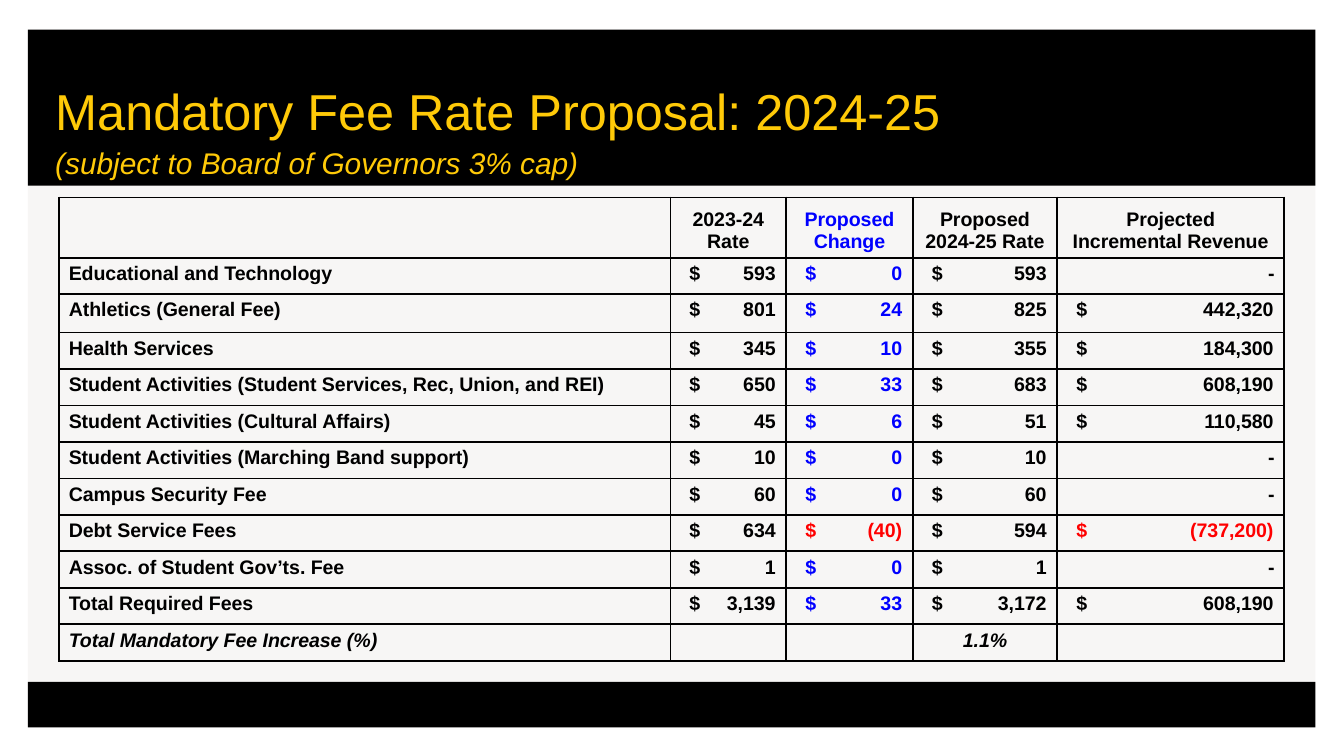
"""Build the mandatory fee rate proposal slide."""
from lxml.etree import SubElement
from pptx import Presentation
from pptx.dml.color import RGBColor
from pptx.enum.shapes import MSO_SHAPE as Shape
from pptx.enum.text import MSO_ANCHOR as Anchor, MSO_AUTO_SIZE as AutoSize, PP_ALIGN as Align
from pptx.oxml.ns import qn
from pptx.util import Cm, Pt

BLACK, BLUE, RED, GOLD = "000000", "0000FF", "FF0000", "FFCA08"


def color(value):
    """Return the colour of a hex string."""
    return RGBColor.from_string(value)


def write(para, text, size=10.5, fill=BLACK, bold=False, italic=False, align=Align.LEFT):
    """Add a formatted span to a paragraph."""
    para.alignment = align
    span = para.add_run()
    span.text = text
    span.font.name = "Arial"
    span.font.size = Pt(size)
    span.font.bold = bold
    span.font.italic = italic
    span.font.color.rgb = color(fill)


deck = Presentation()
deck.slide_width, deck.slide_height = Cm(25.4), Cm(14.28)
page = deck.slides.add_slide(deck.slide_layouts[5])

for top, height, fill, alpha in [
    (0.56, 13.18, "D0C6C0", 15),
    (12.88, 0.86, BLACK, 100),
    (0.56, 2.95, BLACK, 100),
]:
    band = page.shapes.add_shape(Shape.RECTANGLE, Cm(0.53), Cm(top), Cm(24.33), Cm(height))
    band.shadow.inherit = False
    band.line.fill.background()
    band.fill.solid()
    band.fill.fore_color.rgb = color(fill)
    if alpha < 100:
        shade = band.fill._xPr.find(".//" + qn("a:srgbClr"))
        SubElement(shade, qn("a:alpha"), val=str(alpha * 1000))

title = page.shapes.title
page.shapes._spTree.append(title._element)
title.left, title.top, title.width, title.height = Cm(0.79), Cm(0), Cm(22.86), Cm(3.53)
frame = title.text_frame
frame.auto_size = AutoSize.NONE
frame.word_wrap = True
frame.vertical_anchor = Anchor.BOTTOM
para = frame.paragraphs[0]
para.line_spacing, para.space_before, para.space_after = 1.1, Pt(6.2), Pt(6)
write(para, "Mandatory Fee Rate Proposal: 2024-25", size=27, fill=GOLD)
para.add_line_break()
write(para, "(subject to Board of Governors 3% cap)", size=16, fill=GOLD, italic=True)

rows = [
    ("", "2023-24 Rate", "Proposed Change", "Proposed 2024-25 Rate", "Projected\nIncremental Revenue"),
    ("Educational and Technology", "593", "0", "593", "-"),
    ("Athletics (General Fee)", "801", "24", "825", "442,320"),
    ("Health Services", "345", "10", "355", "184,300"),
    ("Student Activities (Student Services, Rec, Union, and REI)", "650", "33", "683", "608,190"),
    ("Student Activities (Cultural Affairs)", "45", "6", "51", "110,580"),
    ("Student Activities (Marching Band support)", "10", "0", "10", "-"),
    ("Campus Security Fee", "60", "0", "60", "-"),
    ("Debt Service Fees", "634", "(40)", "594", "(737,200)"),
    ("Assoc. of Student Gov’ts. Fee", "1", "0", "1", "-"),
    ("Total Required Fees", "3,139", "33", "3,172", "608,190"),
    ("Total Mandatory Fee Increase (%)", "", "", "1.1%", ""),
]
widths = [11.55, 2.19, 2.39, 2.73, 4.29]
heights = [1.14, 0.68, 0.73] + [0.69] * 9
last = len(rows) - 1

grid = page.shapes.add_table(
    len(rows), len(widths), Cm(1.12), Cm(3.73), Cm(sum(widths)), Cm(sum(heights))
).table
grid.first_row = grid.horz_banding = False
for column, width in zip(grid.columns, widths):
    column.width = Cm(width)

for r, (row, height) in enumerate(zip(rows, heights)):
    grid.rows[r].height = Cm(height)
    for c, (text, width) in enumerate(zip(row, widths)):
        cell = grid.cell(r, c)
        money = 0 < r < last and c > 0 and text != "-"
        cell.margin_left = Cm(0.36 if money else 0.18)
        cell.margin_right = Cm(0.18)
        cell.margin_top = cell.margin_bottom = Cm(0.1)
        cell.vertical_anchor = Anchor.BOTTOM if r == 0 else Anchor.TOP
        properties = cell._tc.get_or_add_tcPr()
        for side in ("lnL", "lnR", "lnT", "lnB"):
            border = SubElement(properties, qn("a:" + side), w=str(Pt(1)))
            ink = SubElement(border, qn("a:solidFill"))
            SubElement(ink, qn("a:srgbClr"), val=BLACK)
        cell.fill.background()

        if text.startswith("("):
            fill = RED
        else:
            fill = BLUE if c == 2 else BLACK
        if c == 0 or money:
            align = Align.LEFT
        else:
            align = Align.RIGHT if text == "-" else Align.CENTER
        for n, line in enumerate(text.split("\n")):
            para = cell.text_frame.paragraphs[0] if n == 0 else cell.text_frame.add_paragraph()
            if not line:
                SubElement(para._p, qn("a:endParaRPr"), sz="1050")
                continue
            write(para, "$\t" + line if money else line, fill=fill, bold=True,
                  italic=r == last, align=align)
            if money:
                stops = SubElement(para._p.get_or_add_pPr(), qn("a:tabLst"))
                SubElement(stops, qn("a:tab"), pos=str(Cm(width - 0.56)), algn="r")

deck.save("out.pptx")
